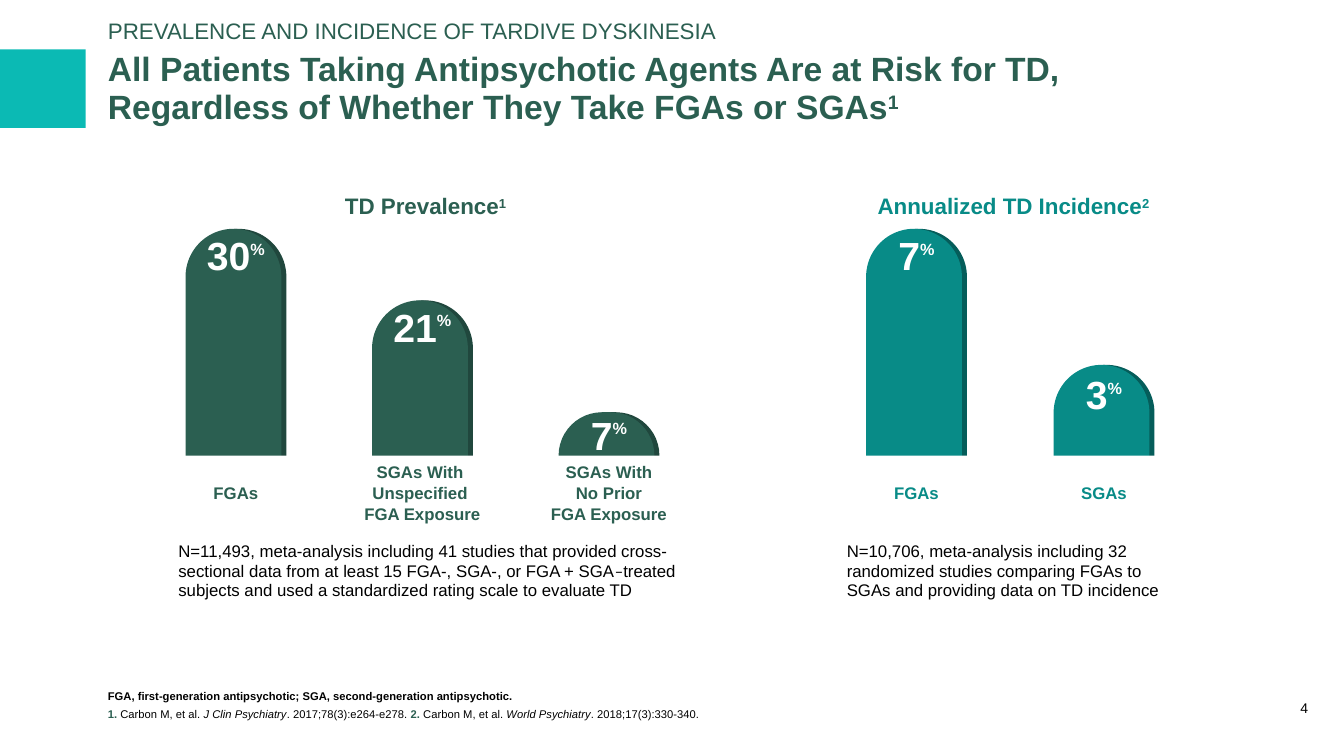
import pptx
import pptx.util
import pptx.dml.color
import pptx.enum.shapes
import pptx.enum.text
import pptx.oxml

RGBColor = pptx.dml.color.RGBColor
Pt = pptx.util.Pt
SHAPE = pptx.enum.shapes.MSO_SHAPE
ALIGN = pptx.enum.text.PP_ALIGN
ANCHOR = pptx.enum.text.MSO_ANCHOR
AUTO_SIZE = pptx.enum.text.MSO_AUTO_SIZE

WIDTH = pptx.util.Inches(13.33)
HEIGHT = pptx.util.Inches(7.5)
COLUMNS, ROWS = 133.3, 75

GREEN = RGBColor(0x2B, 0x5F, 0x51)
DARK_GREEN = RGBColor(0x20, 0x47, 0x3D)
TEAL = RGBColor(0x08, 0x8B, 0x87)
DARK_TEAL = RGBColor(0x05, 0x5D, 0x5A)
ACCENT = RGBColor(0x0B, 0xBA, 0xB4)
BLACK = RGBColor(0, 0, 0)
WHITE = RGBColor(0xFF, 0xFF, 0xFF)

BAR_WIDTH = 9.5
BAR_DEPTH = 0.5
LABEL_WIDTH = 13.7
NUMBER_WIDTH = 6.4
LABEL_TOP = 45.2
PADDING = (1, 0.5, 1, 0.5)


def across(columns):
    return round(WIDTH * columns / COLUMNS)


def down(rows):
    return round(HEIGHT * rows / ROWS)


def cells(left, top, width, height):
    return across(left), down(top), across(width), down(height)


def add_span(para, text, size, color, bold=False, italic=False, font="Arial", raised=0):
    for index, line in enumerate(text.split("\n")):
        if index:
            para.add_line_break()
        span = para.add_run()
        span.text = line
        span.font.name = font
        span.font.size = Pt(size)
        span.font.bold = bold
        span.font.italic = italic
        span.font.color.rgb = color
        if raised:
            span.font._element.set("baseline", str(raised * 1000))


def set_frame(box, padding=(0, 0, 0, 0), anchor=ANCHOR.MIDDLE, wrap=True, fit=AUTO_SIZE.NONE):
    frame = box.text_frame
    left, top, right, bottom = padding
    frame.margin_left, frame.margin_right = across(left), across(right)
    frame.margin_top, frame.margin_bottom = down(top), down(bottom)
    frame.vertical_anchor = anchor
    frame.word_wrap = wrap
    frame.auto_size = fit
    return frame


def set_para(para, align=ALIGN.LEFT, spacing=1.0, after=0):
    para.alignment = align
    para.line_spacing = spacing
    para.space_before = Pt(0)
    para.space_after = Pt(after)
    return para


def add_shape(parent, kind, area, color, rounding=()):
    shape = parent.shapes.add_shape(kind, *cells(*area))
    shape.shadow.inherit = False
    shape.fill.solid()
    shape.fill.fore_color.rgb = color
    shape.line.fill.background()
    for index, amount in enumerate(rounding):
        shape.adjustments[index] = amount
    return shape


def add_text(parent, area, **frame_options):
    return set_frame(parent.shapes.add_textbox(*cells(*area)), **frame_options)


def place_placeholder(holder, area):
    holder.left, holder.top, holder.width, holder.height = cells(*area)
    return set_para(set_frame(holder).paragraphs[0], spacing=0.95)


def add_bar(panel, left, top, height, number_top, value, label, color, shade):
    for offset, fill in ((BAR_DEPTH, shade), (0, color)):
        add_shape(panel, SHAPE.ROUND_2_SAME_RECTANGLE,
                  (left + offset, top, BAR_WIDTH, height), fill, (0.5, 0))

    middle = left + BAR_WIDTH / 2 + BAR_DEPTH / 2
    number = add_text(panel, (middle - NUMBER_WIDTH / 2, number_top, NUMBER_WIDTH, 3.8),
                      padding=(0, 0.5, 0, 0.5), wrap=False)
    para = set_para(number.paragraphs[0], ALIGN.CENTER)
    add_span(para, value, 28, WHITE, bold=True)
    add_span(para, "%", 20, WHITE, bold=True, raised=56)

    plate = add_shape(panel, SHAPE.ROUNDED_RECTANGLE,
                      (middle - LABEL_WIDTH / 2, LABEL_TOP, LABEL_WIDTH, 7.2), WHITE, (0.208,))
    frame = set_frame(plate, wrap=False)
    add_span(set_para(frame.paragraphs[0], ALIGN.CENTER, Pt(15)), label, 12, color, bold=True)


def add_panel(page, heading, mark, heading_area, note, note_area, first, pitch, bars, color, shade):
    panel = page.shapes.add_group_shape()
    for index, (top, height, number_top, value, label) in enumerate(bars):
        add_bar(panel, first + index * pitch, top, height, number_top, value, label, color, shade)

    title = add_text(panel, heading_area, padding=(1.7, 0.5, 1, 0.5),
                     anchor=ANCHOR.TOP, fit=AUTO_SIZE.SHAPE_TO_FIT_TEXT)
    para = set_para(title.paragraphs[0], ALIGN.CENTER)
    add_span(para, heading, 16, color, bold=True)
    add_span(para, mark, 16, color, bold=True, raised=30)

    frame = add_text(panel, note_area, padding=PADDING,
                     anchor=ANCHOR.TOP, fit=AUTO_SIZE.SHAPE_TO_FIT_TEXT)
    para = set_para(frame.paragraphs[0], spacing=Pt(14))
    for text, font in note:
        add_span(para, text, 12, BLACK, font=font)


def add_header(page):
    add_shape(page, SHAPE.RECTANGLE, (0, 4.9, 8.5, 7.8), ACCENT)
    title = place_placeholder(page.shapes.title, (10.7, 3.9, 98.6, 9.9))
    add_span(title, "All Patients Taking Antipsychotic Agents Are at Risk for TD, \n"
             "Regardless of Whether They Take FGAs or SGAs", 24, GREEN, bold=True)
    add_span(title, "1", 24, GREEN, bold=True, raised=30)

    topic = place_placeholder(page.placeholders[1], (10.7, 1.8, 98.6, 2.8))
    properties = topic._p.get_or_add_pPr()
    properties.set("marL", "0")
    properties.set("indent", "0")
    properties.append(pptx.oxml.parse_xml(
        '<a:buNone xmlns:a="http://schemas.openxmlformats.org/drawingml/2006/main"/>'))
    add_span(topic, "PREVALENCE AND INCIDENCE OF TARDIVE DYSKINESIA", 16, GREEN)


def add_footer(page):
    frame = add_text(page, (10.7, 67, 115.6, 4.5), anchor=ANCHOR.BOTTOM)
    add_span(set_para(frame.paragraphs[0], after=3),
             "FGA, first-generation antipsychotic; SGA, second-generation antipsychotic.",
             8, BLACK, bold=True)
    sources = set_para(frame.add_paragraph(), after=3)
    for mark, journal, issue in (
        ("1. ", "J Clin Psychiatry", ". 2017;78(3):e264-e278. "),
        ("2. ", "World Psychiatry", ". 2018;17(3):330-340."),
    ):
        add_span(sources, mark, 8, GREEN, bold=True)
        add_span(sources, "Carbon M, et al. ", 8, BLACK)
        add_span(sources, journal, 8, BLACK, italic=True)
        add_span(sources, issue, 8, BLACK)

    number = add_text(page, (127.7, 66.8, 3.3, 4.3), anchor=ANCHOR.BOTTOM)
    add_span(set_para(number.paragraphs[0], ALIGN.CENTER, 0.95), "4", 10, BLACK)


def main():
    deck = pptx.Presentation()
    deck.slide_width, deck.slide_height = WIDTH, HEIGHT
    page = deck.slides.add_slide(deck.slide_layouts[1])
    add_header(page)
    add_panel(
        page, "Annualized TD Incidence", "2", (81.2, 18.6, 37.9, 3.7),
        [("N=10,706, meta-analysis including 32 randomized studies comparing FGAs to "
          "SGAs and providing data on TD incidence", "Arial")],
        (83, 53.2, 34.5, 6.2), 85.9, 18.6,
        [(22.7, 23.8, 23.4, "7", "FGAs"),
         (36.2, 10.3, 37.2, "3", "SGAs")],
        TEAL, DARK_TEAL)
    add_panel(
        page, "TD Prevalence", "1", (14, 18.6, 55.7, 3.7),
        [("N=11,493, meta-analysis including 41 studies that provided cross-sectional data "
          "from at least 15 FGA-, SGA-, or FGA + SGA", "Arial"),
         ("–", "Calibri"),
         ("treated subjects and used a standardized rating scale to evaluate TD", "Arial")],
        (16.7, 53.2, 51.9, 6.2), 18.4, 18.5,
        [(22.7, 23.8, 23.4, "30", "FGAs"),
         (29.8, 16.7, 30.5, "21", "SGAs With \nUnspecified \nFGA Exposure"),
         (40.9, 8.6, 41.2, "7", "SGAs With\nNo Prior\nFGA Exposure")],
        GREEN, DARK_GREEN)
    add_footer(page)
    deck.save("out.pptx")


if __name__ == "__main__":
    main()
